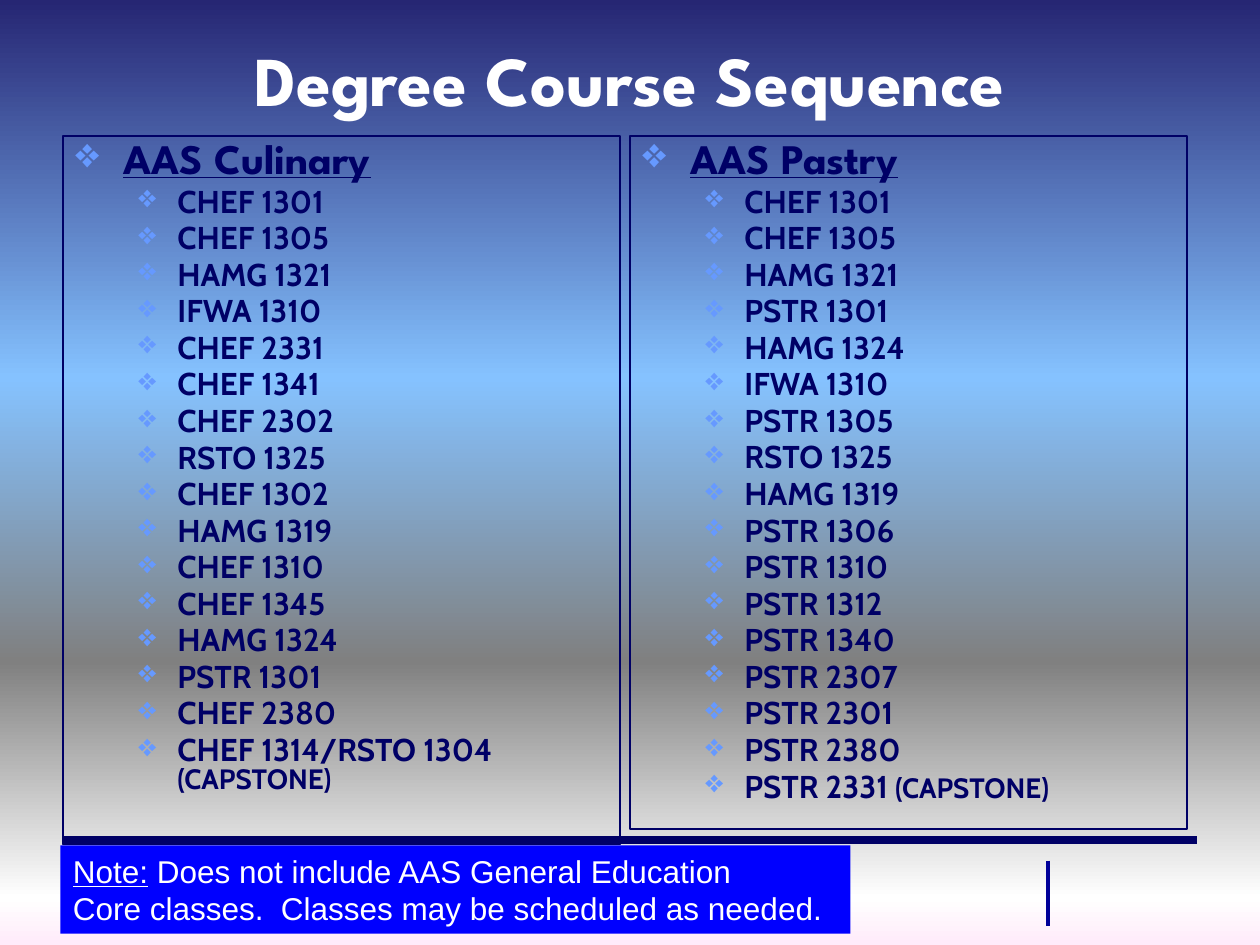
"""Build the degree course sequence slide with two course columns and a note."""
from dataclasses import dataclass

from lxml import etree
from pptx import Presentation
from pptx.dml.color import RGBColor
from pptx.enum.shapes import MSO_CONNECTOR, MSO_SHAPE
from pptx.enum.text import MSO_ANCHOR, PP_ALIGN
from pptx.oxml.ns import qn
from pptx.util import Inches, Pt

STRAIGHT = MSO_CONNECTOR.STRAIGHT
RECTANGLE = MSO_SHAPE.RECTANGLE
TOP, MIDDLE = MSO_ANCHOR.TOP, MSO_ANCHOR.MIDDLE
LEFT, CENTER = PP_ALIGN.LEFT, PP_ALIGN.CENTER


@dataclass(frozen=True)
class Theme:
    navy: str = "000066"
    divider: str = "000099"
    bullet: str = "6699FF"
    note_fill: str = "0000FF"
    white: str = "FFFFFF"
    heading_font: str = "League Spartan"
    course_font: str = "Cabin"
    note_font: str = "Arial"
    title_size: int = 40
    heading_size: int = 24
    course_size: int = 18
    capstone_size: int = 16


THEME = Theme()
TITLE = "Degree Course Sequence"
CAPSTONE = "(CAPSTONE)"
DEGREES = [
    ("AAS Culinary", 5.62, [
        "CHEF 1301", "CHEF 1305", "HAMG 1321", "IFWA 1310", "CHEF 2331", "CHEF 1341",
        "CHEF 2302", "RSTO 1325", "CHEF 1302", "HAMG 1319", "CHEF 1310", "CHEF 1345",
        "HAMG 1324", "PSTR 1301", "CHEF 2380", "CHEF 1314/RSTO 1304 "]),
    ("AAS Pastry", 5.5, [
        "CHEF 1301", "CHEF 1305", "HAMG 1321", "PSTR 1301", "HAMG 1324", "IFWA 1310",
        "PSTR 1305", "RSTO 1325", "HAMG 1319", "PSTR 1306", "PSTR 1310", "PSTR 1312",
        "PSTR 1340", "PSTR 2307", "PSTR 2301", "PSTR 2380", "PSTR 2331 "]),
]
NOTE = [
    [("Note:", True), (" Does not include AAS General Education", False)],
    [("Core classes.  Classes may be scheduled as needed.", False)],
]
BACKGROUND = [(0, "262673"), (40, "85C2FF"), (70, "808080"), (95, "FFFFFF"), (100, "FFEBFA")]
RULES = [
    ((0.5, 6.67, 9.5, 6.67), THEME.navy, 4.5),
    ((8.32, 6.83, 8.32, 7.35), THEME.divider, 2.25),
]
MARGIN, COLUMN_TOP, COLUMN_WIDTH, COLUMN_PITCH = 0.5, 1.08, 4.42, 4.5


def color(value):
    return RGBColor.from_string(value)


def style(run, font, size, fill, bold=False, underline=False):
    run.font.name, run.font.size = font, Pt(size)
    run.font.color.rgb = color(fill)
    run.font.bold, run.font.underline = bold, underline


def paint_background(slide):
    fill = slide.background.fill
    fill.gradient()
    fill.gradient_angle = 270
    stops = next(slide.background._cSld.iter(qn("a:gsLst")))
    for stop in list(stops):
        stops.remove(stop)
    for position, value in BACKGROUND:
        stop = etree.SubElement(stops, qn("a:gs"), pos=str(position * 1000))
        etree.SubElement(stop, qn("a:srgbClr"), val=value)


def add_rule(slide, ends, value, width):
    rule = slide.shapes.add_connector(STRAIGHT, *map(Inches, ends))
    rule.line.color.rgb, rule.line.width = color(value), Pt(width)
    etree.SubElement(rule._element.spPr, qn("a:effectLst"))


def add_box(slide, left, top, width, height):
    box = slide.shapes.add_shape(RECTANGLE, *map(Inches, (left, top, width, height)))
    box.shadow.inherit = False
    box.text_frame.word_wrap = True
    box.text_frame.vertical_anchor = TOP
    return box


def format_bullet(paragraph, level, indent, hanging):
    properties = paragraph._p.get_or_add_pPr()
    properties.set("marL", str(Inches(indent)))
    properties.set("indent", str(-Inches(hanging)))
    bullet_color = etree.SubElement(properties, qn("a:buClr"))
    etree.SubElement(bullet_color, qn("a:srgbClr"), val=THEME.bullet)
    etree.SubElement(properties, qn("a:buChar"), char="❖")
    paragraph.level, paragraph.alignment, paragraph.line_spacing = level, LEFT, 0.8


def add_degree(slide, index, heading, height, courses):
    box = add_box(slide, MARGIN + index * COLUMN_PITCH, COLUMN_TOP, COLUMN_WIDTH, height)
    box.fill.background()
    box.line.color.rgb, box.line.width = color(THEME.navy), Pt(0.75)
    paragraph = box.text_frame.paragraphs[0]
    paragraph.text = heading
    format_bullet(paragraph, 0, 0.38, 0.38)
    style(paragraph.runs[0], THEME.heading_font, THEME.heading_size, THEME.navy, True, True)
    for course in courses:
        paragraph = box.text_frame.add_paragraph()
        paragraph.text = course
        format_bullet(paragraph, 1, 0.81, 0.31)
        paragraph.space_before = Pt(0.2 * THEME.course_size)
        style(paragraph.runs[0], THEME.course_font, THEME.course_size, THEME.navy, True)
    capstone = paragraph.add_run()
    capstone.text = CAPSTONE
    style(capstone, THEME.course_font, THEME.capstone_size, THEME.navy, True)


def add_note(slide):
    box = add_box(slide, 0.48, 6.71, 6.27, 0.7)
    box.fill.solid()
    box.fill.fore_color.rgb = color(THEME.note_fill)
    box.line.fill.background()
    frame = box.text_frame
    frame.text = "\n".join("" for _ in NOTE)
    for paragraph, pieces in zip(frame.paragraphs, NOTE):
        paragraph.alignment = LEFT
        for text, underline in pieces:
            run = paragraph.add_run()
            run.text = text
            style(run, THEME.note_font, THEME.course_size, THEME.white, underline=underline)


def add_title(slide):
    title = slide.shapes.title
    title.left, title.top, title.width, title.height = map(Inches, (MARGIN, 0, 9, 1.25))
    title.text_frame.text = TITLE
    title.text_frame.vertical_anchor = MIDDLE
    paragraph = title.text_frame.paragraphs[0]
    paragraph.alignment = CENTER
    style(paragraph.runs[0], THEME.heading_font, THEME.title_size, THEME.white, True)


def main():
    presentation = Presentation()
    presentation.slide_width, presentation.slide_height = Inches(10), Inches(7.5)
    slide = presentation.slides.add_slide(presentation.slide_layouts[5])
    paint_background(slide)
    add_title(slide)
    for rule in RULES:
        add_rule(slide, *rule)
    for index, degree in enumerate(DEGREES):
        add_degree(slide, index, *degree)
    add_note(slide)
    presentation.save("out.pptx")


if __name__ == "__main__":
    main()
